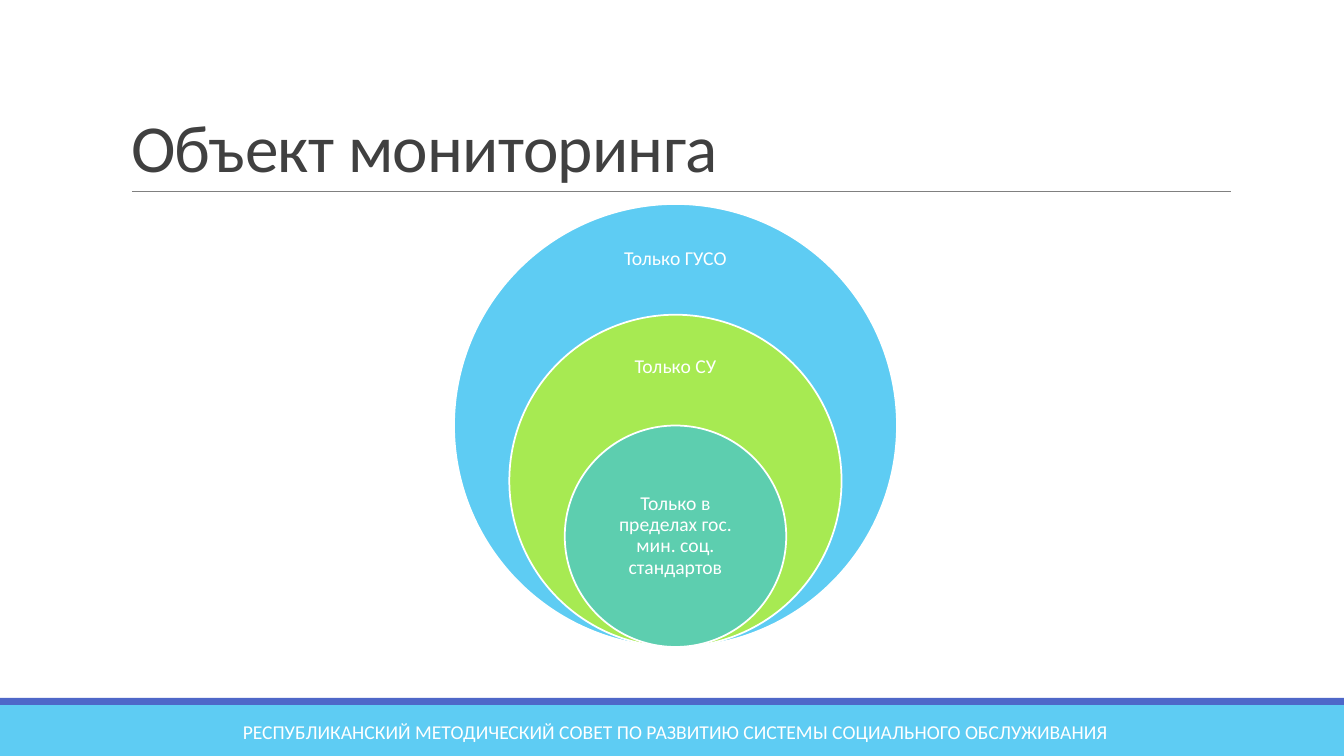
from pptx import Presentation
from pptx.dml.color import RGBColor as Rgb
from pptx.enum.shapes import MSO_CONNECTOR as Conn, MSO_SHAPE as Kind
from pptx.enum.text import MSO_ANCHOR as Anchor, MSO_AUTO_SIZE as Fit, PP_ALIGN as Align
from pptx.oxml.ns import qn
from pptx.util import Pt
from lxml.etree import SubElement as Sub

WIDE, HIGH = 1344, 756
SCALE = 12192000 / WIDE
FONT = "Calibri"
HUES = {"sky": "5ECCF3", "blue": "4E67C8", "lime": "A7EA52", "teal": "5DCEAF",
        "rule": "808080", "dark": "404040", "white": "FFFFFF"}

# diameter as a share of the outer ring, fill, label,
# label box (top, width, height) in px from the ring's top
RINGS = [
    (1, "sky", "Только ГУСО", (22, 155, 66)),
    (0.75, "lime", "Только СУ", (21, 155, 62)),
    (0.5, "teal", "Только в пределах гос. мин. соц. стандартов", (55, 157, 111)),
]


def px(num):
    return round(num * SCALE)


def hue(name):
    return Rgb.from_string(HUES[name])


def write(frame, text, size=14, color="white", align=Align.CENTER,
          anchor=Anchor.MIDDLE, inset=None, lines=1.0, track=0):
    frame.word_wrap = True
    frame.auto_size = Fit.NONE
    frame.vertical_anchor = anchor
    if inset is not None:
        frame.margin_left = frame.margin_right = px(inset)
        frame.margin_top = frame.margin_bottom = px(inset)
    para = frame.paragraphs[0]
    para.alignment = align
    para.line_spacing = lines
    run = para.add_run()
    run.text = text
    run.font.size = Pt(size)
    run.font.name = FONT
    run.font.color.rgb = hue(color)
    if track:
        run.font._element.set("spc", str(round(track * 100)))


def label(slide, box, text, **form):
    area = slide.shapes.add_textbox(*map(px, box))
    write(area.text_frame, text, **form)


def shape(slide, kind, box, fill, line=None):
    item = slide.shapes.add_shape(kind, *map(px, box))
    item.shadow.inherit = False
    item.fill.solid()
    item.fill.fore_color.rgb = hue(fill)
    if line:
        item.line.color.rgb = hue(line)
        item.line.width = Pt(1.25)
    else:
        item.line.fill.background()


def header(slide, box, text):
    left, top, wide, high = box
    base = top + high
    # Thin rule under the title
    rule = slide.shapes.add_connector(
        Conn.STRAIGHT, *map(px, (left + 11, base, left + wide + 1, base)))
    rule.line.color.rgb = hue("rule")
    rule.line.width = Pt(0.5)
    Sub(rule._element.spPr, qn("a:effectLst"))
    # Title
    title = slide.shapes.title
    title.left, title.top, title.width, title.height = map(px, box)
    write(title.text_frame, text, size=48, color="dark", align=Align.LEFT,
          anchor=Anchor.BOTTOM, lines=0.85, track=-0.5)


def rings(slide, box):
    left, top, size, _ = box
    mid, base = left + size / 2, top + size
    for share, fill, text, (drop, wide, high) in RINGS:
        span = size * share
        # Rings share their centre line and lowest point
        shape(slide, Kind.OVAL, (mid - span / 2, base - span, span, span), fill, "white")
        label(slide, (mid - wide / 2, base - span + drop, wide, high), text,
              inset=11, lines=0.9)


def footer(slide, box, text):
    left, top, wide, high = box
    strip = 7
    shape(slide, Kind.RECTANGLE, (left, top + strip, wide, high - strip), "sky")
    shape(slide, Kind.RECTANGLE, (left, top, wide, strip), "blue")
    label(slide, (left + 121, top + 14, 1109, 40), text)


def main():
    deck = Presentation()
    deck.slide_width, deck.slide_height = px(WIDE), px(HIGH)
    slide = deck.slides.add_slide(deck.slide_layouts[5])
    footer(slide, (0, 698, WIDE, HIGH - 698),
           "РЕСПУБЛИКАНСКИЙ МЕТОДИЧЕСКИЙ СОВЕТ ПО РАЗВИТИЮ СИСТЕМЫ СОЦИАЛЬНОГО ОБСЛУЖИВАНИЯ")
    header(slide, (121, 31, 1109, 160), "Объект мониторинга")
    rings(slide, (454, 204, 443, 443))
    deck.save("out.pptx")


if __name__ == "__main__":
    main()
